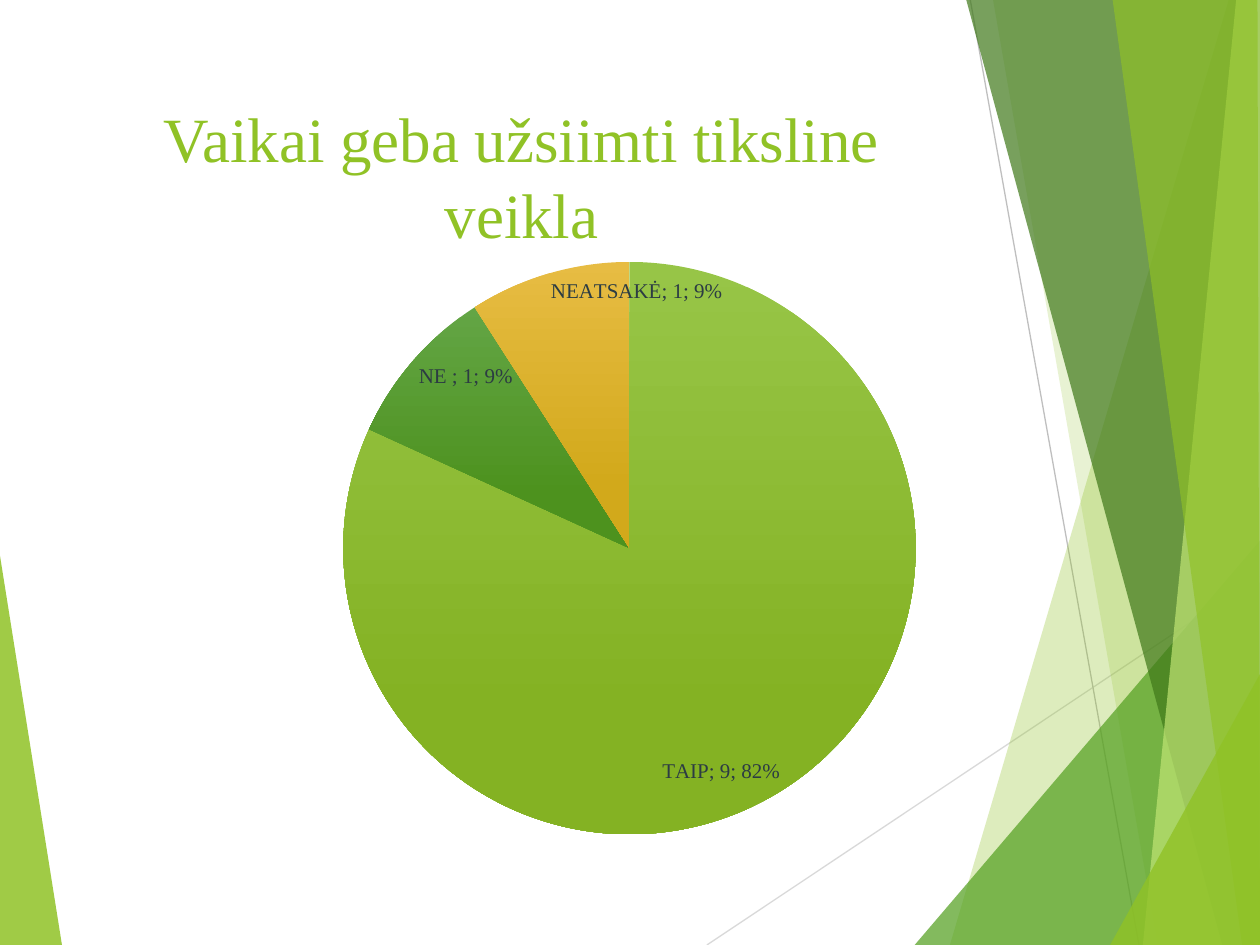
from dataclasses import dataclass

from lxml import etree
from pptx import Presentation
from pptx import util as u
from pptx.chart.data import CategoryChartData
from pptx.dml.color import RGBColor
from pptx.enum import chart as ch, text
from pptx.oxml.ns import qn


@dataclass(frozen=True)
class Theme:
    lime: str = "90C226"
    green: str = "54A021"
    dark: str = "3F7819"
    pale: str = "C0E474"
    ink: str = "2C3C43"
    rays: tuple = ("D9D9D9", "BFBFBF")
    slices: tuple = (("97C547", "84B223"), ("63A545", "4D921E"), ("E7BC43", "D2A91B"))
    fade: float = 0.78
    font: str = "Times New Roman"
    head: int = 36
    label: int = 12


THEME = Theme()
WIDE, HIGH = 25.4, 19.05


def style(font, size, color):
    font.name = THEME.font
    font.size = u.Pt(size)
    font.color.rgb = RGBColor.from_string(color)


def add_facet(slide, box, points, color, alpha):
    """Draw a see-through polygon; points are in cm from the box corner."""
    left, top = box[:2]
    spots = [(u.Cm(left + x), u.Cm(top + y)) for x, y in points]
    pen = slide.shapes.build_freeform(*spots[0])
    pen.add_line_segments(spots[1:], close=True)
    facet = pen.convert_to_shape()
    facet.shadow.inherit = False
    facet.line.fill.background()
    facet.fill.solid()
    facet.fill.fore_color.rgb = RGBColor.from_string(color)
    tint = facet.fill._xPr.find(".//" + qn("a:srgbClr"))
    etree.SubElement(tint, qn("a:alpha"), val=str(alpha * 1000))


def add_ray(slide, box, start, end, color):
    left, top = box[:2]
    ray = slide.shapes.add_connector(
        1, u.Cm(left + start[0]), u.Cm(top + start[1]),
        u.Cm(left + end[0]), u.Cm(top + end[1]))
    ray.line.color.rgb = RGBColor.from_string(color)
    ray.line.width = u.Pt(0.75)
    etree.SubElement(ray._element.spPr, qn("a:effectLst"))


def add_decor(slide, box):
    w, h = box[2:]
    add_facet(slide, box, [(0, 11.2), (1.25, h), (0, h)], THEME.lime, 85)
    add_ray(slide, box, (14.25, h), (w, 11.61), THEME.rays[0])
    add_ray(slide, box, (19.56, 0), (22.96, h), THEME.rays[1])

    # top edge x, bottom edge x, colour, opacity
    bands = [(24.77, 19.15, THEME.lime, 30), (20.02, 23.34, THEME.lime, 20)]
    peaks = [(18.44, 10.9, THEME.green, 72), (22.38, 13.59, THEME.lime, 80)]
    fronts = [(19.48, 24.64, THEME.dark, 70), (24.92, 23.04, THEME.pale, 70)]

    def add_bands(rows):
        for upper, lower, color, alpha in rows:
            add_facet(slide, box, [(upper, 0), (lower, h), (w, h), (w, 0)], color, alpha)

    def add_peak(foot, tip, color, alpha):
        add_facet(slide, box, [(foot, h), (w, tip), (w, h)], color, alpha)

    add_bands(bands)
    add_peak(*peaks[0])
    add_bands(fronts)
    add_facet(slide, box, [(22.43, 0), (25.04, h), (w, h), (25.35, 0)], THEME.lime, 65)
    add_peak(*peaks[1])


def add_title(slide, box):
    title = slide.shapes.title
    title.left, title.top, title.width, title.height = map(u.Cm, box)
    frame = title.text_frame
    frame.text = "Vaikai geba užsiimti tiksline veikla"
    frame.word_wrap = True
    frame.auto_size = text.MSO_AUTO_SIZE.NONE
    frame.vertical_anchor = text.MSO_ANCHOR.MIDDLE
    line = frame.paragraphs[0]
    line.alignment = text.PP_ALIGN.CENTER
    style(line.runs[0].font, THEME.head, THEME.lime)


def add_pie(slide, box):
    data = CategoryChartData()
    data.categories = ["TAIP", "NE ", "NEATSAKĖ"]
    data.add_series("Series 1", (9, 1, 1))
    pie = slide.shapes.add_chart(ch.XL_CHART_TYPE.PIE, *map(u.Cm, box), data).chart
    pie.has_legend = pie.has_title = False
    style(pie.font, THEME.label, THEME.ink)

    plot = pie.plots[0]
    for i, colors in enumerate(THEME.slices):
        fill = plot.series[0].points[i].format.fill
        fill.gradient()
        fill.gradient_angle = 270
        for stop, color, place in zip(fill.gradient_stops, colors, (0, THEME.fade)):
            stop.color.rgb = RGBColor.from_string(color)
            stop.position = place

    plot.has_data_labels = True
    labels = plot.data_labels
    labels.show_category_name = labels.show_value = labels.show_percentage = True
    labels.position = ch.XL_LABEL_POSITION.INSIDE_END
    style(labels.font, THEME.label, THEME.ink)
    mark = etree.Element(qn("c:separator"))
    mark.text = "; "
    labels._element.find(qn("c:showPercent")).getnext().addnext(mark)


def main():
    deck = Presentation()
    deck.slide_width, deck.slide_height = u.Cm(WIDE), u.Cm(HIGH)
    slide = deck.slides.add_slide(deck.slide_layouts[5])
    add_decor(slide, (0, 0, WIDE, HIGH))
    add_title(slide, (1.7, 1.7, 17.63, 3.66))
    add_pie(slide, (3.66, 4.93, 18.06, 12.24))
    deck.save("out.pptx")


if __name__ == "__main__":
    main()
